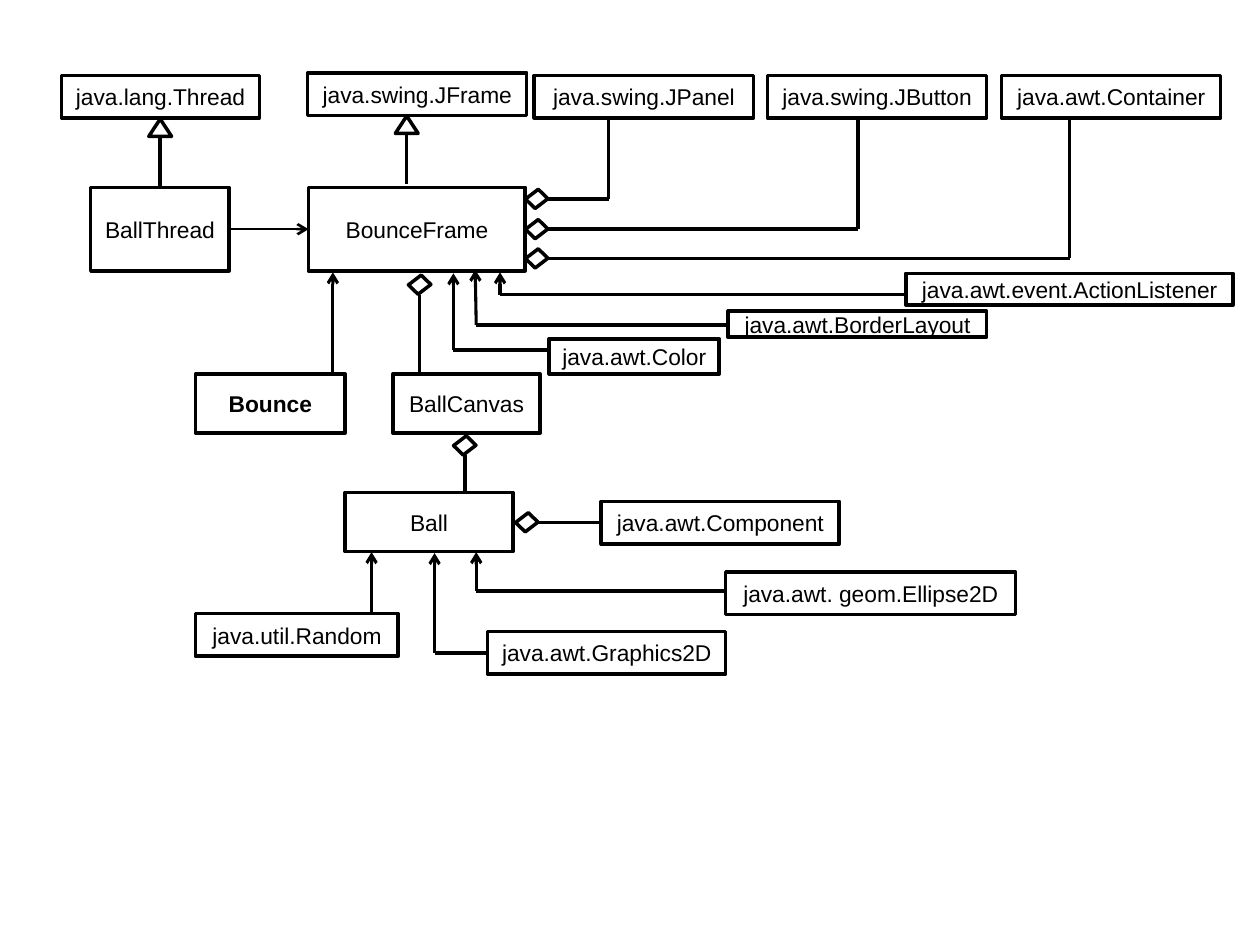
from math import copysign

from lxml import etree
from pptx import Presentation
from pptx.dml.color import RGBColor
from pptx.enum import shapes, text
from pptx.oxml.ns import qn
from pptx.util import Cm, Pt

THEME = {
    "font": "Arial", "size": Pt(13),
    "ink": RGBColor(0, 0, 0), "paper": RGBColor(255, 255, 255),
    "line": Pt(2), "arrow_line": Pt(1.75), "thin_line": Pt(1.5),
}

# All lengths are in centimetres.
# Class boxes: name, left, top, width, height
CLASSES = [
    ("java.lang.Thread", 1.24, 1.52, 3.99, 0.86),
    ("java.swing.JFrame", 6.2, 1.47, 4.42, 0.86),
    ("java.swing.JPanel", 10.77, 1.52, 4.42, 0.86),
    ("java.swing.JButton", 15.47, 1.52, 4.42, 0.86),
    ("java.awt.Container", 20.19, 1.52, 4.42, 0.86),
    ("BallThread", 1.83, 3.78, 2.79, 1.68),
    ("BounceFrame", 6.22, 3.78, 4.37, 1.68),
    ("java.awt.event.ActionListener", 18.26, 5.51, 6.6, 0.64),
    ("java.awt.BorderLayout", 14.68, 6.27, 5.21, 0.53),
    ("java.awt.Color", 11.07, 6.83, 3.43, 0.71),
    ("Bounce", 3.94, 7.54, 3.02, 1.19),
    ("BallCanvas", 7.92, 7.54, 2.97, 1.19),
    ("Ball", 6.96, 9.93, 3.38, 1.19),
    ("java.awt.Component", 12.12, 10.11, 4.8, 0.86),
    ("java.awt. geom.Ellipse2D", 14.63, 11.53, 5.84, 0.86),
    ("java.util.Random", 3.94, 12.37, 4.09, 0.86),
    ("java.awt.Graphics2D", 9.83, 12.73, 4.8, 0.86),
]
MAIN_CLASS = "Bounce"

# Inheritance: x, top of the triangle, bottom of the line
INHERITANCE = [(3.23, 2.4, 3.78), (8.2, 2.34, 3.71)]

# Routes run from the part to the class that holds or uses it
AGGREGATIONS = [
    [(12.27, 2.36), (12.27, 4.01), (11.02, 4.01)],
    [(17.3, 2.38), (17.3, 4.62), (11.02, 4.62)],
    [(21.56, 2.38), (21.56, 5.21), (11.02, 5.21)],
    [(8.46, 7.54), (8.46, 5.94)],
    [(9.37, 9.93), (9.37, 9.18)],
    [(12.07, 10.53), (10.82, 10.53)],
]
USES = [
    [(6.71, 7.54), (6.71, 5.49)],
    [(11.05, 7.06), (9.14, 7.06), (9.14, 5.51)],
    [(14.68, 6.55), (9.6, 6.55), (9.58, 5.44)],
    [(18.26, 5.94), (10.08, 5.94), (10.08, 5.49)],
    [(7.49, 12.37), (7.49, 11.13)],
    [(9.83, 13.16), (8.76, 13.16), (8.76, 11.15)],
    [(14.63, 11.91), (9.6, 11.91), (9.6, 11.13)],
]
THREAD_USE = [(4.62, 4.62), (6.22, 4.62)]

TRIANGLE = (0.46, 0.35)
DIAMOND_SIDE = 0.32
DIAMOND_REACH = 0.2


def add_outline(page, kind, left, top, width, height):
    shape = page.shapes.add_shape(kind, Cm(left), Cm(top), Cm(width), Cm(height))
    shape.shadow.inherit = False
    shape.fill.solid()
    shape.fill.fore_color.rgb = THEME["paper"]
    shape.line.color.rgb = THEME["ink"]
    shape.line.width = THEME["line"]
    return shape


def write(box, wording, bold=False):
    frame = box.text_frame
    frame.word_wrap = False
    frame.vertical_anchor = text.MSO_ANCHOR.MIDDLE
    para = frame.paragraphs[0]
    para.alignment = text.PP_ALIGN.CENTER
    span = para.add_run()
    span.text = wording
    span.font.name = THEME["font"]
    span.font.size = THEME["size"]
    span.font.bold = bold
    span.font.color.rgb = THEME["ink"]


def add_line(page, start, end, width=THEME["line"], arrow=False):
    line = page.shapes.add_connector(
        shapes.MSO_CONNECTOR.STRAIGHT, *(Cm(value) for value in start + end))
    line.line.color.rgb = THEME["ink"]
    line.line.width = width
    if arrow:
        etree.SubElement(line.line._get_or_add_ln(), qn("a:tailEnd"), type="arrow")
    etree.SubElement(line._element.spPr, qn("a:effectLst"))


def add_inheritance(page, x, top, bottom):
    width, height = TRIANGLE
    add_outline(page, shapes.MSO_SHAPE.ISOSCELES_TRIANGLE,
                x - width / 2, top, width, height)
    add_line(page, (x, top + height), (x, bottom))


def add_aggregation(page, route):
    """Draw the route and put a diamond just beyond its end."""
    for start, end in zip(route, route[1:]):
        add_line(page, start, end)
    (x0, y0), (x, y) = route[-2:]
    if x0 == x:
        y += copysign(DIAMOND_REACH, y - y0)
    else:
        x += copysign(DIAMOND_REACH, x - x0)
    diamond = add_outline(page, shapes.MSO_SHAPE.PARALLELOGRAM,
                          x - DIAMOND_SIDE / 2, y - DIAMOND_SIDE / 2,
                          DIAMOND_SIDE, DIAMOND_SIDE)
    diamond.adjustments[0] = 0.15
    diamond.rotation = 44


def add_use(page, route, width=THEME["arrow_line"]):
    for start, end in zip(route[:-2], route[1:-1]):
        add_line(page, start, end)
    add_line(page, *route[-2:], width=width, arrow=True)


def main():
    deck = Presentation()
    deck.slide_width, deck.slide_height = Cm(25.4), Cm(19.05)
    page = deck.slides.add_slide(deck.slide_layouts[6])
    for name, *place in CLASSES:
        box = add_outline(page, shapes.MSO_SHAPE.RECTANGLE, *place)
        write(box, name, bold=name == MAIN_CLASS)
    for link in INHERITANCE:
        add_inheritance(page, *link)
    for route in AGGREGATIONS:
        add_aggregation(page, route)
    for route in USES:
        add_use(page, route)
    add_use(page, THREAD_USE, width=THEME["thin_line"])
    deck.save("out.pptx")


if __name__ == "__main__":
    main()
